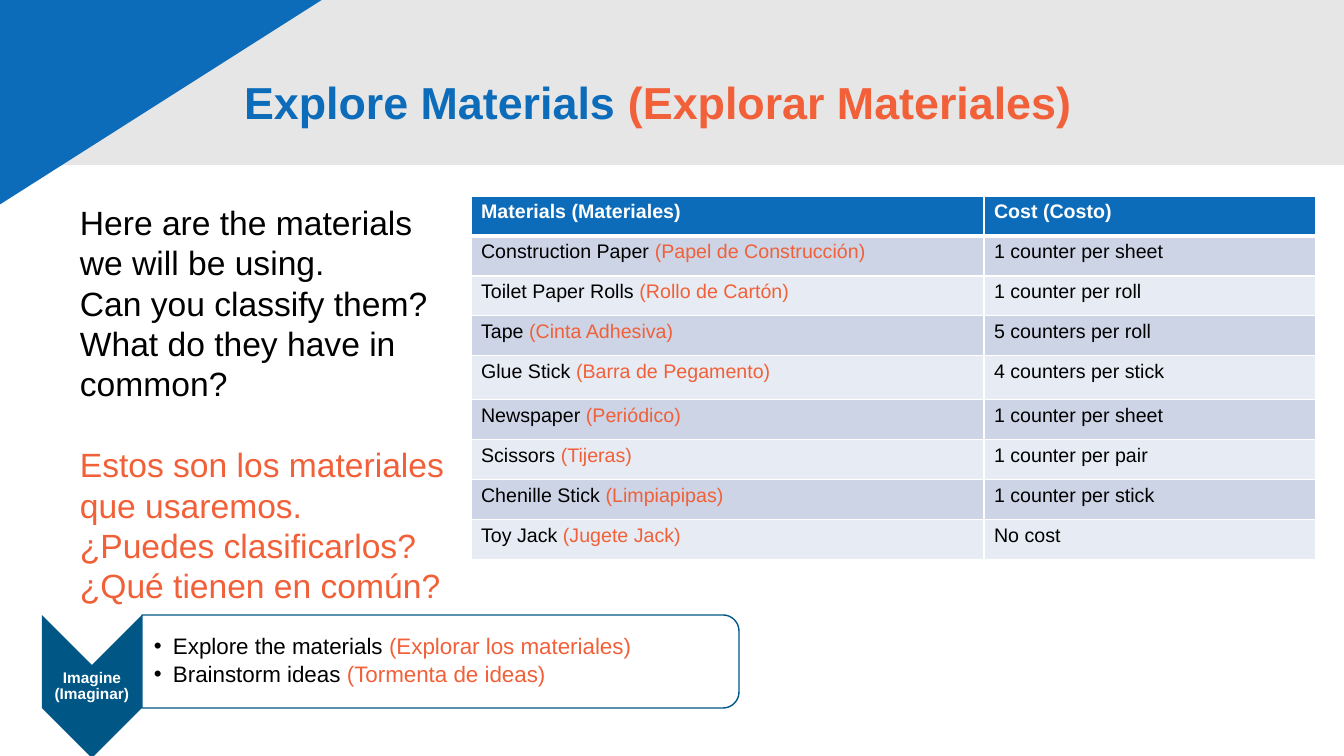
from dataclasses import dataclass
from math import cos, pi, sin
from typing import Any, NamedTuple

from lxml.etree import SubElement
from pptx import Presentation
from pptx.dml.color import RGBColor
from pptx.enum.shapes import MSO_SHAPE
from pptx.enum.text import MSO_ANCHOR, MSO_AUTO_SIZE, PP_ALIGN
from pptx.oxml.ns import qn
from pptx.util import Emu, Pt


@dataclass(frozen=True)
class Theme:
    font: str = "Arial"
    blue: str = "0D6CB9"
    navy: str = "005786"
    orange: str = "F16038"
    grey: str = "E7E6E6"
    black: str = "000000"
    white: str = "FFFFFF"
    bands: tuple[str, str] = ("CCD4E6", "E7EBF3")
    title_size: int = 32
    body_size: int = 24
    bullet_size: int = 16
    table_size: int = 14
    badge_size: int = 11


class Box(NamedTuple):
    left: int
    top: int
    width: int
    height: int


class Span(NamedTuple):
    text: str
    color: str
    bold: bool = False


class Line(NamedTuple):
    spans: list[Span]
    format: dict[str, Any] = {}
    bullet: bool = False


class Backdrop(NamedTuple):
    preset: MSO_SHAPE
    box: Box
    color: str
    rotation: int = 0
    flipped: bool = False


class Material(NamedTuple):
    english: str
    spanish: str
    cost: str


THEME = Theme()
SLIDE_WIDTH, SLIDE_HEIGHT = 1344, 756
SCALE = 12192000 / SLIDE_WIDTH

BACKDROPS = [
    Backdrop(MSO_SHAPE.RECTANGLE, Box(-26, -19, 1370, 184), THEME.grey),
    Backdrop(MSO_SHAPE.RIGHT_TRIANGLE, Box(-259, -173, 853, 542), THEME.blue, 180, True),
]
MATERIALS = [
    Material("Construction Paper", "Papel de Construcción", "1 counter per sheet"),
    Material("Toilet Paper Rolls", "Rollo de Cartón", "1 counter per roll"),
    Material("Tape", "Cinta Adhesiva", "5 counters per roll"),
    Material("Glue Stick", "Barra de Pegamento", "4 counters per stick"),
    Material("Newspaper", "Periódico", "1 counter per sheet"),
    Material("Scissors", "Tijeras", "1 counter per pair"),
    Material("Chenille Stick", "Limpiapipas", "1 counter per stick"),
    Material("Toy Jack", "Jugete Jack", "No cost"),
]
ENGLISH = ["Here are the materials we will be using.", "Can you classify them?",
           "What do they have in common?"]
SPANISH = ["Estos son los materiales que usaremos.", "¿Puedes clasificarlos?",
           "¿Qué tienen en común?"]
STEPS = [("Explore the materials", "Explorar los materiales"),
         ("Brainstorm ideas", "Tormenta de ideas")]


def px(value: float) -> Emu:
    return Emu(round(value * SCALE))


def place(box: Box) -> list[Emu]:
    return [px(value) for value in box]


def apply(target: Any, values: dict[str, Any]) -> None:
    for name, value in values.items():
        setattr(target, name, value)


def bilingual(english: str, spanish: str, color: str = THEME.black, bold: bool = False) -> list[Span]:
    return [Span(f"{english} ", color, bold), Span(f"({spanish})", THEME.orange, bold)]


def add_bullet(paragraph: Any) -> None:
    properties = paragraph._p.get_or_add_pPr()
    properties.set("marL", str(px(19)))
    properties.set("indent", str(-px(19)))
    SubElement(properties, qn("a:buFont")).set("typeface", THEME.font)
    SubElement(properties, qn("a:buChar")).set("char", "•")


def write(frame: Any, lines: list[Line], size: int, values: dict[str, Any]) -> None:
    apply(frame, values)
    for index, line in enumerate(lines):
        paragraph = frame.paragraphs[0] if index == 0 else frame.add_paragraph()
        if line.bullet:
            add_bullet(paragraph)
        apply(paragraph, {"alignment": PP_ALIGN.LEFT} | line.format)
        for span in line.spans:
            run = paragraph.add_run()
            run.text = span.text
            apply(run.font, {"name": THEME.font, "size": Pt(size), "bold": span.bold})
            run.font.color.rgb = RGBColor.from_string(span.color)


def paint(shape: Any, color: str) -> None:
    shape.shadow.inherit = False
    shape.fill.solid()
    shape.fill.fore_color.rgb = RGBColor.from_string(color)
    shape.line.fill.background()


def add_backdrop(slide: Any, backdrop: Backdrop) -> None:
    shape = slide.shapes.add_shape(backdrop.preset, *place(backdrop.box))
    paint(shape, backdrop.color)
    shape.rotation = backdrop.rotation
    if backdrop.flipped:
        shape.element.spPr.xfrm.set("flipH", "1")


def add_outline(slide: Any, points: list[tuple[float, float]], color: str) -> Any:
    corners = [(px(x), px(y)) for x, y in points]
    builder = slide.shapes.build_freeform(*corners[0])
    builder.add_line_segments(corners[1:], close=True)
    shape = builder.convert_to_shape()
    paint(shape, color)
    return shape


def add_badge(slide: Any) -> None:
    points = [(142, 615), (142, 708), (92, 758), (42, 708), (42, 615), (92, 665)]
    badge = add_outline(slide, points, THEME.navy)
    label = Line([Span("Imagine (Imaginar)", THEME.white, True)],
                 {"alignment": PP_ALIGN.CENTER, "line_spacing": 0.9})
    write(badge.text_frame, [label], THEME.badge_size, {
        "word_wrap": True, "vertical_anchor": MSO_ANCHOR.MIDDLE,
        "margin_left": px(1), "margin_right": px(1),
        "margin_top": px(47), "margin_bottom": px(47)})


def add_panel(slide: Any) -> None:
    left, top, right, bottom, radius, steps = 142, 615, 739, 708, 16, 12
    points = [(left, top)]
    for start, center in ((-pi / 2, top + radius), (0, bottom - radius)):
        angles = [start + pi / 2 * step / steps for step in range(steps + 1)]
        points += [(right - radius + radius * cos(angle), center + radius * sin(angle))
                   for angle in angles]
    panel = add_outline(slide, points + [(left, bottom)], THEME.white)
    color = panel.element.spPr.find(f"{qn('a:solidFill')}/{qn('a:srgbClr')}")
    SubElement(color, qn("a:alpha")).set("val", "90000")
    panel.line.color.rgb = RGBColor.from_string(THEME.navy)
    panel.line.width = Pt(1)
    spacing = {"line_spacing": 0.9, "space_after": Pt(3)}
    lines = [Line(bilingual(*step), spacing, True) for step in STEPS]
    write(panel.text_frame, lines, THEME.bullet_size, {
        "word_wrap": True, "vertical_anchor": MSO_ANCHOR.MIDDLE,
        "margin_left": px(12), "margin_right": px(5),
        "margin_top": px(5), "margin_bottom": px(5)})


def add_questions(slide: Any) -> None:
    box = slide.shapes.add_textbox(*place(Box(70, 197, 404, 448)))
    lines = [Line([Span(text, THEME.black)]) for text in ENGLISH]
    lines += [Line([Span(text, THEME.orange)], {} if index else {"space_before": Pt(29)})
              for index, text in enumerate(SPANISH)]
    write(box.text_frame, lines, THEME.body_size, {"word_wrap": True})


def format_cell(cell: Any, spans: list[Span], color: str, widths: dict[str, int]) -> None:
    write(cell.text_frame, [Line(spans)], THEME.table_size, {"word_wrap": True})
    properties = cell._tc.get_or_add_tcPr()
    for side, width in widths.items():
        border = SubElement(properties, qn(f"a:ln{side}"), w=str(Pt(width)))
        fill = SubElement(border, qn("a:solidFill"))
        SubElement(fill, qn("a:srgbClr")).set("val", THEME.white)
    cell.fill.solid()
    cell.fill.fore_color.rgb = RGBColor.from_string(color)


def add_materials(slide: Any) -> None:
    header = [[Span(text, THEME.white, True)] for text in ("Materials (Materiales)", "Cost (Costo)")]
    rows = [header] + [[bilingual(item.english, item.spanish), [Span(item.cost, THEME.black)]]
                       for item in MATERIALS]
    table = slide.shapes.add_table(len(rows), 2, *place(Box(471, 196, 845, 364))).table
    table.horz_banding = False
    for column, width in zip(table.columns, (513, 332)):
        column.width = px(width)
    for index, row in enumerate(rows):
        table.rows[index].height = px(44 if index == 4 else 40)
        color = THEME.bands[(index - 1) % 2] if index else THEME.blue
        widths = {"L": 1, "R": 1, "T": 3 if index == 1 else 1, "B": 1 if index else 3}
        for column, spans in enumerate(row):
            format_cell(table.cell(index, column), spans, color, widths)


def add_title(slide: Any) -> None:
    title = slide.shapes.title
    apply(title, dict(zip(("left", "top", "width", "height"), place(Box(234, 32, 978, 146)))))
    spans = bilingual("Explore Materials", "Explorar Materiales", THEME.blue, True)
    write(title.text_frame, [Line(spans, {"line_spacing": 0.9})], THEME.title_size, {
        "word_wrap": True, "auto_size": MSO_AUTO_SIZE.NONE, "vertical_anchor": MSO_ANCHOR.MIDDLE})
    title.element.getparent().append(title.element)


def main() -> None:
    presentation = Presentation()
    apply(presentation, {"slide_width": px(SLIDE_WIDTH), "slide_height": px(SLIDE_HEIGHT)})
    slide = presentation.slides.add_slide(presentation.slide_layouts[5])
    for backdrop in BACKDROPS:
        add_backdrop(slide, backdrop)
    for add_part in (add_badge, add_panel, add_questions, add_title, add_materials):
        add_part(slide)
    presentation.save("out.pptx")


if __name__ == "__main__":
    main()
